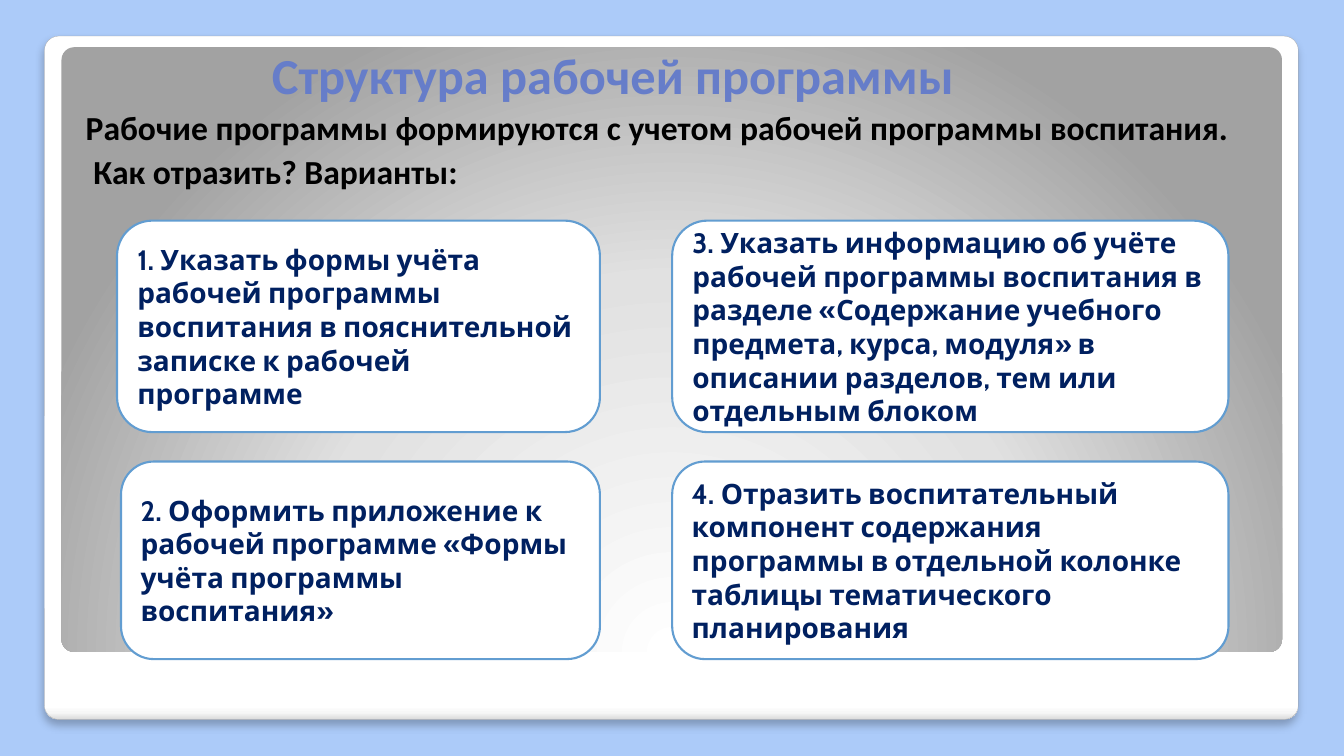
import pptx
import pptx.dml.color
import pptx.enum.shapes
import pptx.enum.text
import pptx.oxml
import pptx.oxml.ns
import pptx.util
from pptx.util import Cm

ALIGN = pptx.enum.text.PP_ALIGN
ANCHOR = pptx.enum.text.MSO_ANCHOR


def colour(value):
    return pptx.dml.color.RGBColor.from_string(value)


def xml(text):
    """Parse a fragment of DrawingML whose root carries {ns}."""
    return pptx.oxml.parse_xml(text.replace("{ns}", pptx.oxml.ns.nsdecls("a")))


class Deck:
    heading = {"size": 36, "name": "Calibri", "color": "667DC9"}
    lead = {"size": 24, "name": "Calibri", "color": "000000"}
    card_text = {"size": 20, "name": "Cabin", "color": "002060"}
    card_line = "629DD1"

    def __init__(self, width, height, background):
        self.presentation = pptx.Presentation()
        self.presentation.slide_width = width
        self.presentation.slide_height = height
        self.slide = self.presentation.slides.add_slide(self.presentation.slide_layouts[5])
        fill = self.slide.background.fill
        fill.solid()
        fill.fore_color.rgb = colour(background)

    def set_text(self, frame, paragraphs, style, paragraph_format, anchor):
        frame.word_wrap = True
        frame.auto_size = pptx.enum.text.MSO_AUTO_SIZE.NONE
        frame.vertical_anchor = anchor
        for index, text in enumerate(paragraphs):
            paragraph = frame.add_paragraph() if index else frame.paragraphs[0]
            for key, value in paragraph_format.items():
                setattr(paragraph, key, value)
            run = paragraph.add_run()
            run.text = text
            font_values = {"size": pptx.util.Pt(style["size"]), "name": style["name"], "bold": True}
            for key, value in font_values.items():
                setattr(run.font, key, value)
            run.font.color.rgb = colour(style["color"])

    def rounded(self, box, fill, line=None, line_width=1.5):
        shape = self.slide.shapes.add_shape(
            pptx.enum.shapes.MSO_SHAPE.ROUNDED_RECTANGLE, *map(Cm, box))
        shape.shadow.inherit = False
        shape.fill.solid()
        shape.fill.fore_color.rgb = colour(fill)
        if line:
            shape.line.color.rgb = colour(line)
            shape.line.width = pptx.util.Pt(line_width)
        else:
            shape.line.fill.background()
        return shape

    def panel(self, box, stops, direction, line=None, shadow=None):
        """Draw a gradient backdrop; direction is the a:lin or a:path element."""
        shape = self.rounded(box, "FFFFFF", line, 0.16)
        shape.adjustments[0] = 0.021
        gradient_stops = "".join(
            f'<a:gs pos="{position * 1000}"><a:srgbClr val="{value}"/></a:gs>'
            for position, value in stops)
        properties = shape.element.spPr
        solid = properties.find(pptx.oxml.ns.qn("a:solidFill"))
        properties.replace(solid, xml(
            f'<a:gradFill {{ns}} rotWithShape="1"><a:gsLst>{gradient_stops}</a:gsLst>'
            f'{direction}</a:gradFill>'))
        if shadow:
            properties.find(pptx.oxml.ns.qn("a:effectLst")).append(xml(shadow))

    def title(self, box, text):
        title = self.slide.shapes.title
        for key, value in zip(("left", "top", "width", "height"), box):
            setattr(title, key, Cm(value))
        self.set_text(title.text_frame, [text], self.heading,
                      {"alignment": ALIGN.LEFT}, ANCHOR.BOTTOM)
        title.element.getparent().append(title.element)  # in front of the panels

    def body(self, box, paragraphs):
        frame = self.slide.shapes.add_textbox(*map(Cm, box)).text_frame
        insets = {"margin_left": 0.51, "margin_top": 0.25, "margin_right": 0.25,
                  "margin_bottom": 0.13}
        for key, value in insets.items():
            setattr(frame, key, Cm(value))
        self.set_text(frame, paragraphs, self.lead,
                      {"alignment": ALIGN.JUSTIFY, "space_before": pptx.util.Pt(2.5)},
                      ANCHOR.TOP)

    def card(self, box, text):
        shape = self.rounded(box, "FFFFFF", self.card_line)
        self.set_text(shape.text_frame, [text], self.card_text,
                      {"alignment": ALIGN.LEFT}, ANCHOR.MIDDLE)


def main():
    deck = Deck(Cm(33.87), Cm(19.05), "ACCBF9")
    deck.panel(
        (1.12, 0.91, 31.6, 17.22),
        [(0, "FFFFFF"), (98, "FFFFFF"), (99, "F7F7F7"), (100, "DADADA")],
        '<a:lin ang="5400000" scaled="0"/>',
        line="A4A4A4",
        shadow='<a:outerShdw {ns} blurRad="76200" dist="50800" dir="5400000" rotWithShape="0">'
               '<a:srgbClr val="000000"><a:alpha val="25000"/></a:srgbClr></a:outerShdw>')
    deck.panel(
        (1.55, 1.19, 30.76, 15.24),
        [(0, "FFFFFF"), (55, "E1E1E1"), (100, "A2A2A2")],
        '<a:path path="circle"><a:fillToRect l="50000" t="175000" r="50000" b="-75000"/></a:path>')
    deck.title((6.6, 0, 25.15, 2.77), "Структура рабочей программы")
    deck.body((1.65, 2.44, 31.01, 14.43), [
        "Рабочие программы формируются с учетом рабочей программы воспитания.",
        " Как отразить? Варианты:",
    ])

    upper, lower = (5.56, 5.33), (11.63, 4.98)
    options = [
        (2.95, 12.17, upper, "Указать формы учёта рабочей программы воспитания "
                             "в пояснительной записке к рабочей программе"),
        (3.05, 12.07, lower, "Оформить приложение к рабочей программе "
                             "«Формы учёта программы воспитания»"),
        (16.94, 14.02, upper, "Указать информацию об учёте рабочей программы воспитания "
                              "в разделе «Содержание учебного предмета, курса, модуля» "
                              "в описании разделов, тем или отдельным блоком"),
        (16.94, 14.02, lower, "Отразить воспитательный компонент содержания программы "
                              "в отдельной колонке таблицы тематического планирования"),
    ]
    for number, (left, width, (top, height), text) in enumerate(options, 1):
        deck.card((left, top, width, height), f"{number}. {text}")
    deck.presentation.save("out.pptx")


if __name__ == "__main__":
    main()
